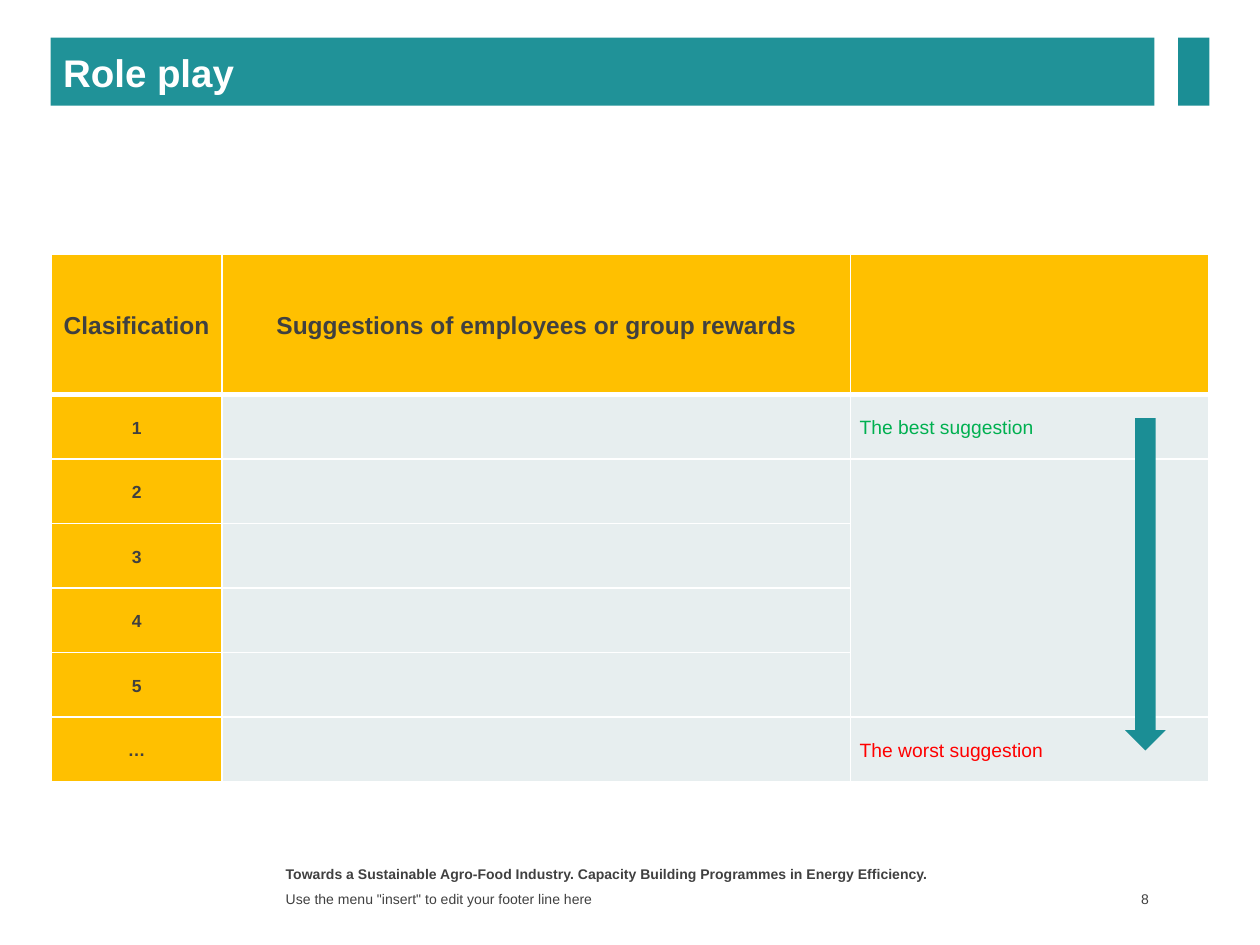
"""Build the "Role play" slide with its ranking table of reward suggestions."""
from dataclasses import dataclass

from lxml import etree
from pptx import Presentation
from pptx.dml.color import RGBColor
from pptx.enum import shapes, text
from pptx.oxml import ns
from pptx.util import Cm, Pt

TEAL, TITLE_TEAL = "1B8E95", "209298"
AMBER, PALE, WHITE, DARK = "FFC000", "E7EEEF", "FFFFFF", "404040"
LEFT, CENTER, RIGHT = text.PP_ALIGN.LEFT, text.PP_ALIGN.CENTER, text.PP_ALIGN.RIGHT
MIDDLE, TOP = text.MSO_ANCHOR.MIDDLE, text.MSO_ANCHOR.TOP


@dataclass(frozen=True)
class Style:
    size: float
    color: str = DARK
    bold: bool = False
    align: text.PP_ALIGN = LEFT


@dataclass(frozen=True)
class Box:
    left: float
    top: float
    width: float
    height: float

    def lengths(self) -> tuple:
        return Cm(self.left), Cm(self.top), Cm(self.width), Cm(self.height)


@dataclass(frozen=True)
class FooterLine:
    wording: str
    box: Box
    style: Style
    anchor: text.MSO_ANCHOR = MIDDLE
    right_inset: float = 0.25


HEADINGS = ["Clasification", "Suggestions of employees or group rewards", ""]
RANKS = ["1", "2", "3", "4", "5", "…"]
VERDICTS = {1: ("The best suggestion", "00B050"), len(RANKS): ("The worst suggestion", "FF0000")}
COLUMN_WIDTHS = [3.45, 12.67, 7.22]
HEADING_HEIGHT, RANK_HEIGHT = 2.82, 1.3
FOOTER = [
    FooterLine(
        "Towards a Sustainable Agro-Food Industry. Capacity Building Programmes in Energy Efficiency.",
        Box(5.51, 17.32, 13.97, 0.53), Style(8, bold=True), TOP),
    FooterLine('Use the menu "insert" to edit your footer line here',
               Box(5.51, 17.88, 13.97, 0.48), Style(8)),
    FooterLine("8", Box(21.84, 17.86, 1.42, 0.51), Style(8, align=RIGHT), right_inset=0.1),
]


def rgb(value: str) -> RGBColor:
    return RGBColor.from_string(value)


def fill_solid(target, color: str) -> None:
    target.fill.solid()
    target.fill.fore_color.rgb = rgb(color)


def write(frame, wording: str, style: Style) -> None:
    frame.text = wording
    paragraph = frame.paragraphs[0]
    paragraph.alignment = style.align
    for run in paragraph.runs:
        run.font.name = "Arial"
        run.font.size = Pt(style.size)
        run.font.bold = style.bold
        run.font.color.rgb = rgb(style.color)


def add_title(slide, wording: str, box: Box) -> None:
    title = slide.shapes.title
    title.left, title.top, title.width, title.height = box.lengths()
    fill_solid(title, TITLE_TEAL)
    write(title.text_frame, wording, Style(22, WHITE, True))
    title.text_frame.auto_size = text.MSO_AUTO_SIZE.NONE
    title.text_frame.vertical_anchor = MIDDLE


def add_teal_shape(slide, preset: shapes.MSO_SHAPE, box: Box) -> None:
    shape = slide.shapes.add_shape(preset, *box.lengths())
    shape.shadow.inherit = False
    fill_solid(shape, TEAL)
    shape.line.fill.background()


def add_footer_line(slide, line: FooterLine) -> None:
    frame = slide.shapes.add_textbox(*line.box.lengths()).text_frame
    frame.word_wrap = True
    frame.vertical_anchor = line.anchor
    frame.margin_right = Cm(line.right_inset)
    write(frame, line.wording, line.style)


def add_borders(cell, top: float, bottom: float) -> None:
    properties = cell._tc.get_or_add_tcPr()
    for side, width in (("L", 1), ("R", 1), ("T", top), ("B", bottom)):
        border = etree.SubElement(properties, ns.qn(f"a:ln{side}"), w=str(Pt(width)))
        solid = etree.SubElement(border, ns.qn("a:solidFill"))
        etree.SubElement(solid, ns.qn("a:srgbClr"), val=WHITE)


def format_cell(cell, row: int, color: str) -> None:
    add_borders(cell, top=3 if row == 1 else 1, bottom=3 if row == 0 else 1)
    fill_solid(cell, color)
    cell.vertical_anchor = MIDDLE
    cell.margin_left = cell.margin_right = Cm(0.18)
    cell.margin_top = cell.margin_bottom = 0


def write_cell(cell, wording: str, style: Style) -> None:
    write(cell.text_frame, wording, style)
    cell.text_frame.paragraphs[0].line_spacing = 1.15


def add_ranking(slide, left: float, top: float) -> None:
    box = Box(left, top, sum(COLUMN_WIDTHS), HEADING_HEIGHT + RANK_HEIGHT * len(RANKS))
    ranking = slide.shapes.add_table(len(RANKS) + 1, len(HEADINGS), *box.lengths()).table
    ranking.horz_banding = False
    for column, width in zip(ranking.columns, COLUMN_WIDTHS):
        column.width = Cm(width)
    for index, row in enumerate(ranking.rows):
        row.height = Cm(RANK_HEIGHT if index else HEADING_HEIGHT)
        for position, cell in enumerate(row.cells):
            format_cell(cell, index, PALE if index and position else AMBER)
    for position, heading in enumerate(HEADINGS):
        write_cell(ranking.cell(0, position), heading, Style(14, bold=True, align=CENTER))
    for index, rank in enumerate(RANKS, start=1):
        write_cell(ranking.cell(index, 0), rank, Style(10, bold=True, align=CENTER))
    for index, (verdict, color) in VERDICTS.items():
        write_cell(ranking.cell(index, 2), verdict, Style(11, color))
    ranking.cell(2, 2).merge(ranking.cell(len(RANKS) - 1, 2))


def main() -> None:
    deck = Presentation()
    deck.slide_width, deck.slide_height = Cm(25.4), Cm(19.05)
    slide = deck.slides.add_slide(deck.slide_layouts[5])
    add_title(slide, "Role play", Box(1.02, 0.76, 22.25, 1.37))
    add_teal_shape(slide, shapes.MSO_SHAPE.RECTANGLE, Box(23.75, 0.76, 0.63, 1.37))
    add_ranking(slide, 1.03, 5.13)
    add_teal_shape(slide, shapes.MSO_SHAPE.DOWN_ARROW, Box(22.68, 8.43, 0.82, 6.7))
    for line in FOOTER:
        add_footer_line(slide, line)
    deck.save("out.pptx")


if __name__ == "__main__":
    main()
